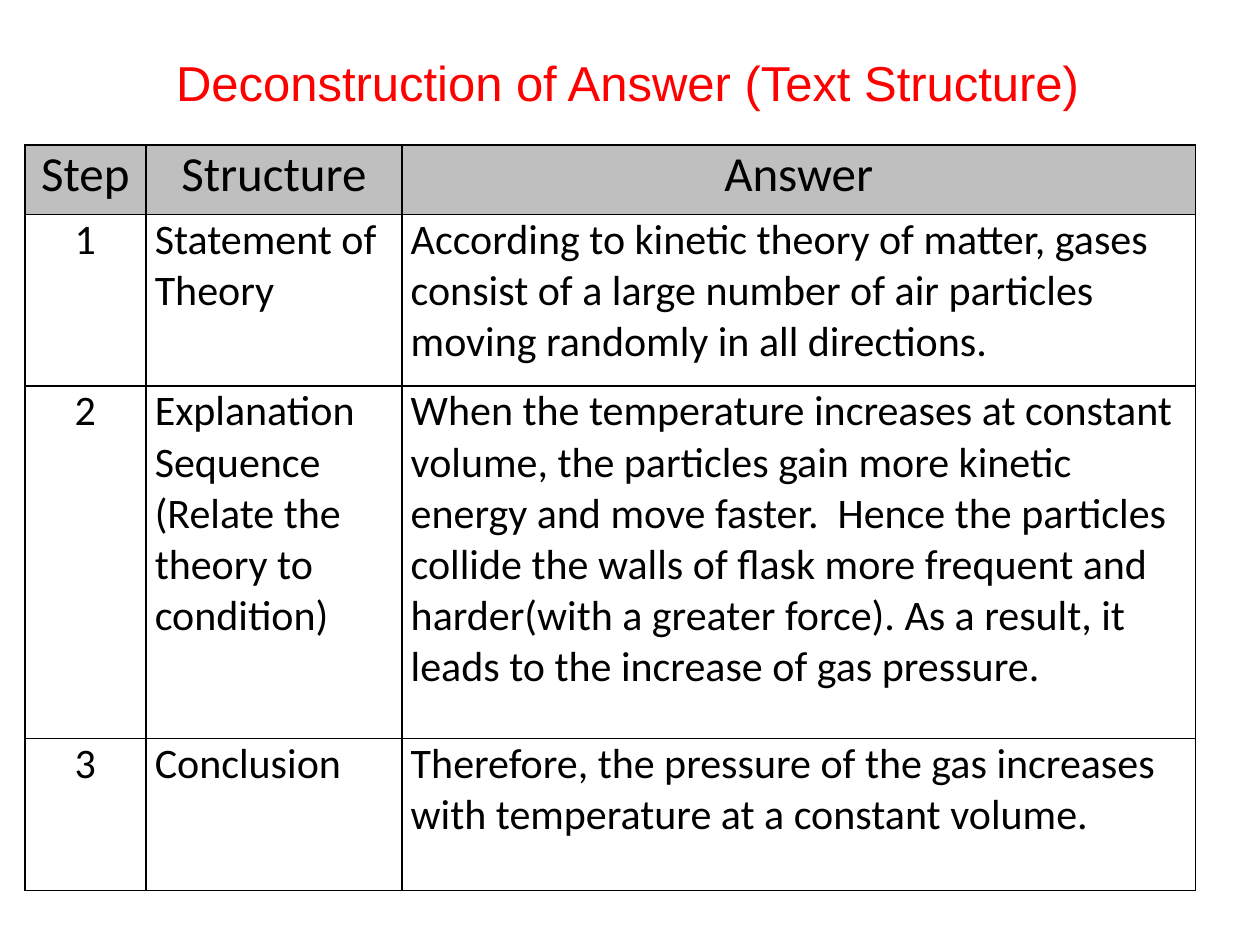
from lxml.etree import SubElement
from pptx import Presentation
from pptx.dml.color import RGBColor
from pptx.enum.text import MSO_AUTO_SIZE as AutoSize, PP_ALIGN as Align
from pptx.oxml.ns import qn
from pptx.util import Cm, Pt

COLOURS = {"title": "FF0000", "text": "000000", "border": "000000", "header": "BFBFBF"}
COLUMN_WIDTHS = [2.44, 5.16, 16.0]
ROW_HEIGHTS = [1.4, 3.46, 7.11, 3.06]

# Each cell is a list of paragraphs
ROWS = [
    [["Step"], ["Structure"], ["Answer"]],
    [["1"], ["Statement of Theory"],
     ["According to kinetic theory of matter, gases consist of a large number of "
      "air particles moving randomly in all directions."]],
    [["2"], ["Explanation Sequence", "(Relate the theory to condition)"],
     ["When the temperature increases at constant volume, the particles gain more "
      "kinetic energy and move faster.  Hence the particles collide the walls of "
      "flask more frequent and harder(with a greater force). As a result, it leads "
      "to the increase of gas pressure."]],
    [["3"], ["Conclusion"],
     ["Therefore, the pressure of the gas increases with temperature at a constant "
      "volume."]],
]


class SlideBuilder:
    """Holds the style and the current slide."""

    title_font = "Arial"
    table_font = "Calibri"
    large = 28
    normal = 24

    def __init__(self, slide):
        self.slide = slide

    def add_lines(self, frame, lines, font, size, colour, align=Align.LEFT):
        for index, line in enumerate(lines):
            para = frame.add_paragraph() if index else frame.paragraphs[0]
            para.alignment = align
            span = para.add_run()
            span.text = line
            span.font.name = font
            span.font.size = Pt(size)
            span.font.color.rgb = RGBColor.from_string(COLOURS[colour])

    def title(self, text, left, top, width, height):
        box = self.slide.shapes.add_textbox(Cm(left), Cm(top), Cm(width), Cm(height))
        box.text_frame.word_wrap = True
        box.text_frame.auto_size = AutoSize.SHAPE_TO_FIT_TEXT
        self.add_lines(box.text_frame, [text], self.title_font, self.large, "title")

    def table(self, rows, left, top, widths, heights):
        frame = self.slide.shapes.add_table(
            len(rows), len(widths), Cm(left), Cm(top), Cm(sum(widths)), Cm(sum(heights)))
        table = frame.table
        for column, width in zip(table.columns, widths):
            column.width = Cm(width)
        for row, height in zip(table.rows, heights):
            row.height = Cm(height)
        for r, row in enumerate(rows):
            for c, lines in enumerate(row):
                self.cell(table.cell(r, c), lines, r == 0, c == 0)

    def cell(self, cell, lines, is_header, is_step):
        cell.margin_left = cell.margin_right = Cm(0.18)
        cell.margin_top = cell.margin_bottom = 0
        self.add_lines(cell.text_frame, lines, self.table_font,
                       self.large if is_header else self.normal, "text",
                       Align.CENTER if is_header or is_step else Align.LEFT)
        # Borders come before the fill in the cell properties
        self.borders(cell)
        if is_header:
            cell.fill.solid()
            cell.fill.fore_color.rgb = RGBColor.from_string(COLOURS["header"])
        else:
            cell.fill.background()

    def borders(self, cell):
        properties = cell._tc.get_or_add_tcPr()
        for side in ("lnL", "lnR", "lnT", "lnB"):
            line = SubElement(properties, qn(f"a:{side}"), w=str(Pt(1)))
            fill = SubElement(line, qn("a:solidFill"))
            SubElement(fill, qn("a:srgbClr"), val=COLOURS["border"])


def main():
    deck = Presentation()
    deck.slide_width, deck.slide_height = Cm(25.4), Cm(19.05)
    page = SlideBuilder(deck.slides.add_slide(deck.slide_layouts[6]))

    # Answer structure table
    page.table(ROWS, 0.5, 2.92, COLUMN_WIDTHS, ROW_HEIGHTS)

    # Heading
    page.title("Deconstruction of Answer (Text Structure)", 3.3, 0.94, 19, 1.45)

    deck.save("out.pptx")


if __name__ == "__main__":
    main()
